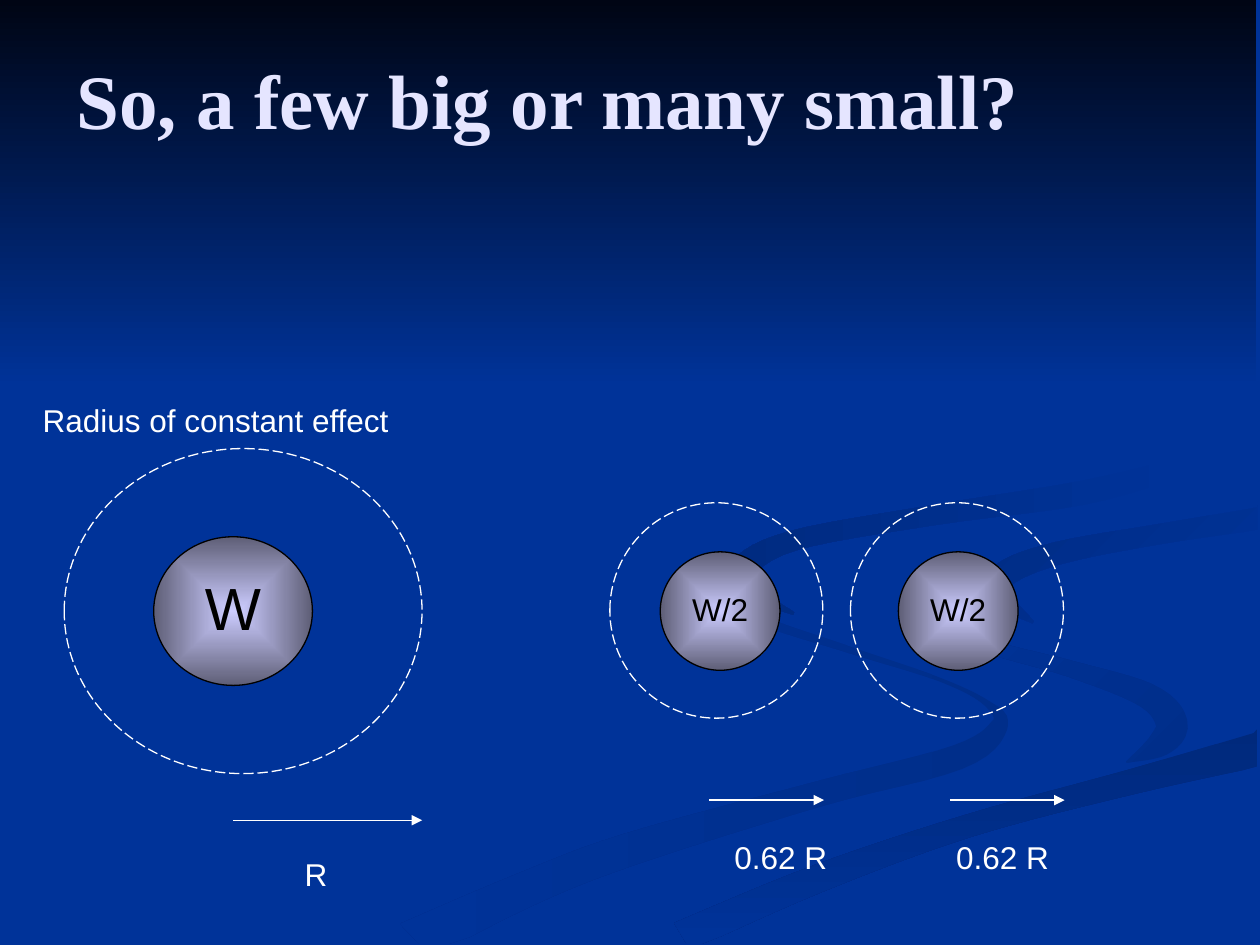
from math import hypot
from pptx import Presentation
from pptx.dml.color import RGBColor as RGB
from pptx.enum.dml import MSO_LINE as Dash
from pptx.enum.shapes import MSO_CONNECTOR as Connector, MSO_SHAPE as Preset
from pptx.enum.text import MSO_ANCHOR as Anchor, PP_ALIGN as Align
from pptx.oxml import parse_xml
from pptx.oxml.ns import qn
from pptx.util import Inches, Pt
from lxml.etree import SubElement

COLORS = {
    "blue": "003399", "night": "000514", "lilac": "E5E5FF", "white": "FFFFFF",
    "black": "000000", "core": "CCCCFF", "rim": "5E5E76", "lower": "002E8A",
    "sweep": "00297C", "upper": "002C85", "top": "002B81",
}
DRAWING_NS = "http://schemas.openxmlformats.org/drawingml/2006/main"
RIGHT_EDGE, BOTTOM_EDGE = 9.98, 7.49
CURVE_STEPS = 6

RIBBONS = {
    "lower band": dict(start="lower", end="blue", angle=180, spine=[
        (5.73, 4.61, 0.04), (5.95, 4.88, 0.07), (6.75, 5.16, 0.05), (7.45, 5.39, 0.03),
        (7.83, 5.58, 0.05), (7.93, 5.76, 0.14), (7.6, 6.01, 0.2), (6.5, 6.3, 0.2),
        (5, 6.74, 0.26), (4.17, 7.06, 0.28), (3.25, 7.49, 0.35)]),
    "middle curl": dict(start="lower", end="blue", angle=225, spine=[
        (7.24, 4.65, 0.02), (7.33, 4.85, 0.05), (7.75, 5.1, 0.1), (8.5, 5.31, 0.13),
        (9.1, 5.52, 0.2), (9.3, 5.74, 0.25), (9.2, 5.91, 0.2), (8.94, 6.05, 0.01)]),
    "right sweep": dict(start="sweep", end="blue", angle=90, spine=[
        (10.1, 5.92, 0.28), (9, 6.2, 0.2), (7.7, 6.55, 0.18), (6.5, 6.97, 0.22),
        (5.4, 7.44, 0.25)]),
    "upper curl": dict(start="blue", end="upper", angle=225, spine=[
        (8.2, 4.94, 0.02), (7.95, 4.74, 0.16), (7.97, 4.56, 0.2), (8.4, 4.39, 0.18),
        (9.2, 4.24, 0.16), (10.1, 4.1, 0.18)]),
    "top band": dict(start="blue", end="top", angle=180, spine=[
        (6.3, 4.87, 0.02), (5.97, 4.7, 0.13), (5.89, 4.52, 0.2), (6.3, 4.29, 0.16),
        (7.4, 4.09, 0.16), (8.6, 3.91, 0.19), (9.4, 3.7, 0.15)]),
}


def smooth(knots):
    """Return points on a Catmull-Rom curve through the knots."""
    padded = [knots[0], *knots, knots[-1]]
    points = []
    for before, here, there, after in zip(padded, padded[1:], padded[2:], padded[3:]):
        for step in range(CURVE_STEPS):
            t = step / CURVE_STEPS
            points.append(tuple(
                b + ((c - a) * t + (2 * a - 5 * b + 4 * c - d) * t ** 2
                     + (3 * b - a - 3 * c + d) * t ** 3) / 2
                for a, b, c, d in zip(before, here, there, after)))
    return points + [knots[-1]]


def ribbon_outline(spine):
    """Widen a spine of (x, y, width) knots into an outline kept on the slide."""
    curve = smooth(spine)
    near_side, far_side = [], []
    for i, (x, y, width) in enumerate(curve):
        back, ahead = curve[max(i - 1, 0)], curve[min(i + 1, len(curve) - 1)]
        dx, dy = ahead[0] - back[0], ahead[1] - back[1]
        reach = width / 2 / hypot(dx, dy)
        for side, sign in ((near_side, 1), (far_side, -1)):
            side.append((min(x - sign * dy * reach, RIGHT_EDGE),
                         min(y + sign * dx * reach, BOTTOM_EDGE)))
    return near_side + far_side[::-1]


def write_text(frame, text, size=18, font="Arial", color="white", bold=False,
               align=Align.LEFT, anchor=Anchor.TOP, spacing=1.0, wrap=True):
    """Fill a text frame with one formatted line."""
    frame.word_wrap = wrap
    frame.vertical_anchor = anchor
    line = frame.paragraphs[0]
    line.alignment, line.line_spacing = align, spacing
    run = line.add_run()
    run.text = text
    run.font.size, run.font.name, run.font.bold = Pt(size), font, bold
    run.font.color.rgb = RGB.from_string(COLORS[color])


class SlideArtist:
    """Hold the style and the current slide, and draw each kind of element."""

    def __init__(self, slide):
        self.slide = slide
        self.shapes = slide.shapes
        self.line_width = Pt(0.75)
        backdrop = slide.background.fill
        backdrop.solid()
        backdrop.fore_color.rgb = RGB.from_string(COLORS["blue"])

    def gradient(self, shape, start, end, direction):
        stops = "".join(
            f'<a:gs pos="{place}"><a:srgbClr val="{COLORS[color]}"/></a:gs>'
            for place, color in ((0, start), (100000, end)))
        fill = parse_xml(f'<a:gradFill xmlns:a="{DRAWING_NS}" rotWithShape="1">'
                         f'<a:gsLst>{stops}</a:gsLst>{direction}</a:gradFill>')
        shape.element.spPr.find(qn("a:xfrm")).getnext().addnext(fill)

    def linear_gradient(self, shape, start, end, angle):
        shape.line.fill.background()
        self.gradient(shape, start, end, f'<a:lin ang="{angle * 60000}" scaled="1"/>')

    def outline(self, line, color):
        line.color.rgb = RGB.from_string(COLORS[color])
        line.width = self.line_width

    def preset(self, kind, *box):
        shape = self.shapes.add_shape(kind, *map(Inches, box))
        shape.shadow.inherit = False
        return shape

    def sky(self, *box):
        self.linear_gradient(self.preset(Preset.RECTANGLE, *box), "night", "blue", 90)

    def ribbon(self, spine, start, end, angle):
        first, *rest = [(Inches(x), Inches(y)) for x, y in ribbon_outline(spine)]
        builder = self.shapes.build_freeform(*first)
        builder.add_line_segments(rest, close=True)
        band = builder.convert_to_shape()
        band.shadow.inherit = False
        self.linear_gradient(band, start, end, angle)

    def charge(self, text, size, *box):
        ball = self.preset(Preset.OVAL, *box)
        self.gradient(ball, "core", "rim", '<a:path path="shape"><a:fillToRect '
                      'l="50000" t="50000" r="50000" b="50000"/></a:path>')
        self.outline(ball.line, "black")
        write_text(ball.text_frame, text, size=size, color="black", wrap=False,
                   align=Align.CENTER, anchor=Anchor.MIDDLE, spacing=0.93)

    def effect_ring(self, *box):
        ring = self.preset(Preset.OVAL, *box)
        ring.fill.background()
        self.outline(ring.line, "white")
        ring.line.dash_style = Dash.LONG_DASH

    def radius_arrow(self, left, y, length):
        arrow = self.shapes.add_connector(
            Connector.STRAIGHT, *map(Inches, (left, y, left + length, y)))
        self.outline(arrow.line, "white")
        SubElement(arrow.line._get_or_add_ln(), qn("a:tailEnd"), type="triangle")
        SubElement(arrow.element.spPr, qn("a:effectLst"))

    def label(self, text, *box, **style):
        write_text(self.shapes.add_textbox(*map(Inches, box)).text_frame, text, **style)


def main():
    deck = Presentation()
    deck.slide_width, deck.slide_height = Inches(10), Inches(7.5)
    artist = SlideArtist(deck.slides.add_slide(deck.slide_layouts[6]))

    for ribbon in RIBBONS.values():
        artist.ribbon(**ribbon)
    artist.sky(0, 0, 9.97, 3.07)

    artist.label("So, a few big or many small?", 0.51, 0.2, 8.99, 1.24, size=44,
                 font="Times New Roman", color="lilac", bold=True,
                 anchor=Anchor.MIDDLE, spacing=0.93)

    artist.charge("W", 34, 1.22, 4.26, 1.26, 1.18)
    for left in (5.24, 7.13):
        artist.charge("W/2", 18, left, 4.38, 0.95, 0.94)

    artist.effect_ring(0.51, 3.56, 2.84, 2.58)
    for left in (4.84, 6.75):
        artist.effect_ring(left, 3.99, 1.69, 1.71)

    artist.radius_arrow(1.85, 6.51, 1.5)
    for left in (5.63, 7.54):
        artist.radius_arrow(left, 6.35, 0.91)

    artist.label("R", 2.32, 6.74, 0.71, 0.4)
    for left in (5.73, 7.49):
        artist.label("0.62 R", left, 6.6, 1.02, 0.4)
    artist.label("Radius of constant effect", 0.24, 3.13, 3.37, 0.4)

    deck.save("out.pptx")


if __name__ == "__main__":
    main()
